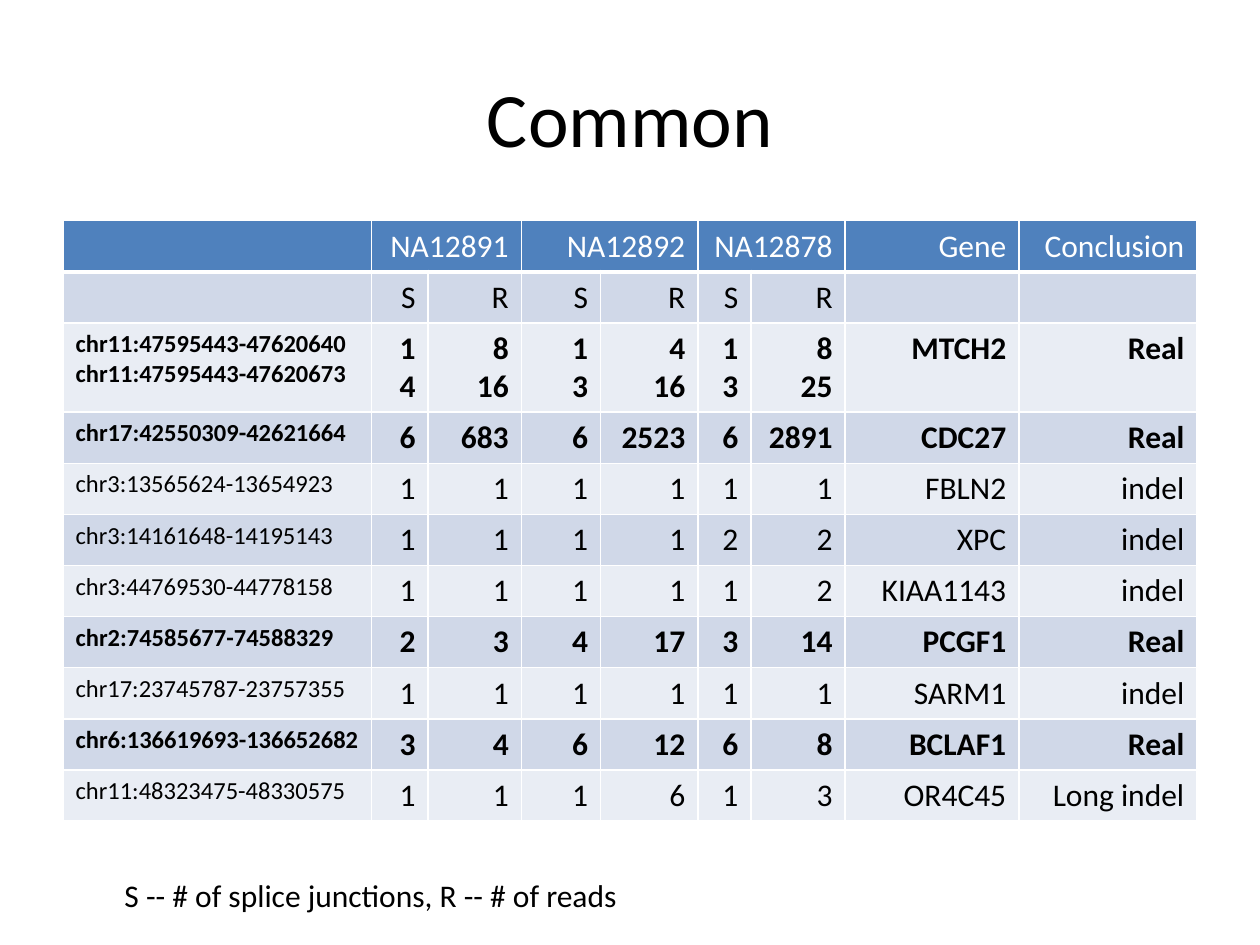
from lxml import etree
from pptx import Presentation
from pptx import util as u
from pptx.dml.color import RGBColor
from pptx.enum import text
from pptx.oxml.ns import qn

BLACK = RGBColor(0x00, 0x00, 0x00)
WHITE = RGBColor(0xFF, 0xFF, 0xFF)
HEADER_BLUE = RGBColor(0x4F, 0x81, 0xBD)
BANDS = [RGBColor(0xE9, 0xED, 0xF4), RGBColor(0xD0, 0xD8, 0xE8)]

FONT = "Calibri"
TITLE = "Common"
LEGEND = "S -- # of splice junctions, R -- # of reads"

# Region, then S and R for each sample, gene and conclusion
ROWS = [
    ["", "NA12891", "", "NA12892", "", "NA12878", "", "Gene", "Conclusion"],
    ["", "S", "R", "S", "R", "S", "R", "", ""],
    ["chr11:47595443-47620640\nchr11:47595443-47620673",
     "1 4", "8\n16", "1\n3", "4\n16", "1\n3", "8\n25", "MTCH2", "Real"],
    ["chr17:42550309-42621664", "6", "683", "6", "2523", "6", "2891", "CDC27", "Real"],
    ["chr3:13565624-13654923", "1", "1", "1", "1", "1", "1", "FBLN2", "indel"],
    ["chr3:14161648-14195143", "1", "1", "1", "1", "2", "2", "XPC", "indel"],
    ["chr3:44769530-44778158", "1", "1", "1", "1", "1", "2", "KIAA1143", "indel"],
    ["chr2:74585677-74588329", "2", "3", "4", "17", "3", "14", "PCGF1", "Real"],
    ["chr17:23745787-23757355", "1", "1", "1", "1", "1", "1", "SARM1", "indel"],
    ["chr6:136619693-136652682", "3", "4", "6", "12", "6", "8", "BCLAF1", "Real"],
    ["chr11:48323475-48330575", "1", "1", "1", "6", "1", "3", "OR4C45", "Long indel"],
]
SAMPLE_COLS = [1, 3, 5]
COL_WIDTHS = [6.22, 1.14, 1.88, 1.6, 1.96, 1.07, 1.9, 3.5, 3.59]
ROW_HEIGHT, TWO_LINE_HEIGHT = 1.03, 1.8


def write(tf, content, align, color, **font):
    """Fill a text frame, one paragraph per line of content."""
    tf.text = content
    for p in tf.paragraphs:
        p.alignment = align
        p.font.color.rgb = color
        for r in p.runs:
            r.font.color.rgb = color
            for name, value in {"name": FONT, **font}.items():
                setattr(r.font, name, value)


def add_label(slide, box, content, align, size, anchor, wrap):
    tf = slide.shapes.add_textbox(*map(u.Cm, box)).text_frame
    tf.word_wrap = wrap
    tf.vertical_anchor = anchor
    write(tf, content, align, BLACK, size=u.Pt(size))


def set_borders(cell, bottom):
    """White lines on all sides; they must come before the fill in tcPr."""
    tc_pr = cell._tc.get_or_add_tcPr()
    sides = {"a:lnL": 1, "a:lnR": 1, "a:lnT": 1, "a:lnB": bottom}
    for i, (tag, width) in enumerate(sides.items()):
        ln = etree.Element(qn(tag), w=str(u.Pt(width)))
        fill = etree.SubElement(ln, qn("a:solidFill"))
        etree.SubElement(fill, qn("a:srgbClr"), val=str(WHITE))
        tc_pr.insert(i, ln)


def add_junction_table(slide):
    heights = [TWO_LINE_HEIGHT if "\n" in row[0] else ROW_HEIGHT for row in ROWS]
    table = slide.shapes.add_table(
        len(ROWS), len(COL_WIDTHS), u.Cm(1.27), u.Cm(4.45),
        u.Cm(sum(COL_WIDTHS)), u.Cm(sum(heights))).table
    for column, width in zip(table.columns, COL_WIDTHS):
        column.width = u.Cm(width)
    for row, height in zip(table.rows, heights):
        row.height = u.Cm(height)
    for c in SAMPLE_COLS:
        table.cell(0, c).merge(table.cell(0, c + 1))

    for i, row in enumerate(ROWS):
        header = i == 0
        for j, content in enumerate(row):
            cell = table.cell(i, j)
            cell.fill.solid()
            cell.fill.fore_color.rgb = HEADER_BLUE if header else BANDS[i % 2]
            set_borders(cell, bottom=3 if header else 1)
            write(cell.text_frame, content,
                  text.PP_ALIGN.RIGHT if j else text.PP_ALIGN.LEFT,
                  WHITE if header else BLACK,
                  size=u.Pt(18 if j else 14), bold=row[-1] == "Real")


def main():
    prs = Presentation()
    prs.slide_width, prs.slide_height = u.Cm(25.4), u.Cm(19.05)
    s = prs.slides.add_slide(prs.slide_layouts[6])
    add_label(s, (1.27, 0.76, 22.86, 3.18), TITLE, text.PP_ALIGN.CENTER, 44,
              text.MSO_ANCHOR.MIDDLE, True)
    add_junction_table(s)
    add_label(s, (2.26, 17.53, 10.54, 1.02), LEGEND, text.PP_ALIGN.LEFT, 18,
              text.MSO_ANCHOR.TOP, False)
    prs.save("out.pptx")


if __name__ == "__main__":
    main()
